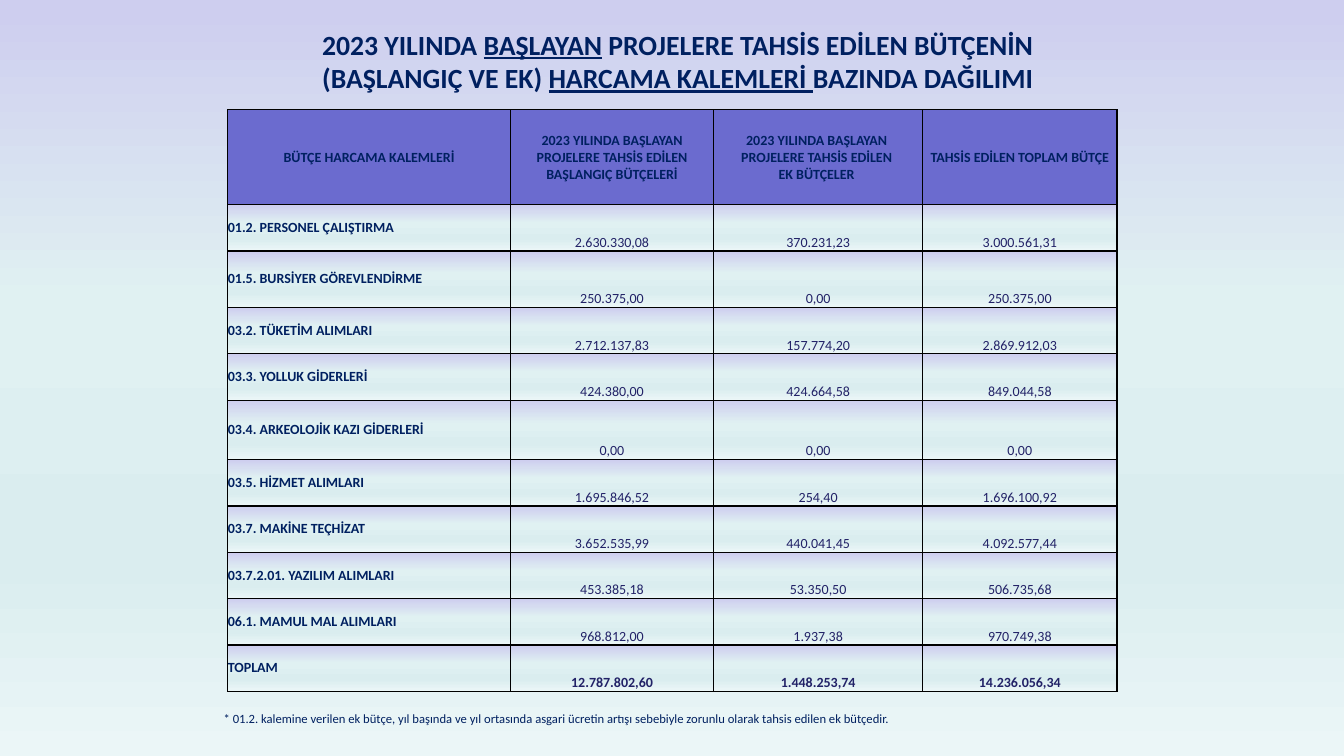
from copy import deepcopy

from lxml import etree
from pptx import Presentation
from pptx.dml.color import RGBColor
from pptx.enum.text import MSO_ANCHOR, MSO_AUTO_SIZE, PP_ALIGN
from pptx.oxml.ns import qn
from pptx.util import Emu, Pt

PX = 9144
FONT = "Calibri"
CENTER, LEFT = PP_ALIGN.CENTER, PP_ALIGN.LEFT
MIDDLE, BOTTOM = MSO_ANCHOR.MIDDLE, MSO_ANCHOR.BOTTOM
NO_AUTOFIT = MSO_AUTO_SIZE.NONE

COLORS = {
    "navy": "002060",
    "figure": "222267",
    "header": "6B6BCF",
    "border": "000000",
    "lavender": "CECEEF",
    "mint": "E0F1F2",
    "aqua": "DAEDEF",
    "ice": "EBF6F7",
}
GRADIENT = [(0.01, "lavender"), (0.4, "mint"), (0.74, "aqua"), (1, "ice")]

TITLE_RUNS = [
    ("2023 YILINDA ", False),
    ("BAŞLAYAN", True),
    (" PROJELERE TAHSİS EDİLEN BÜTÇENİN (BAŞLANGIÇ VE EK) ", False),
    ("HARCAMA KALEMLERİ ", True),
    ("BAZINDA DAĞILIMI", False),
]
COLUMN_WIDTHS = [280, 202, 207, 193]
ROW_HEIGHTS = [94, 46, 56, 46, 46, 59] + [46] * 5
BUDGET_ROWS = [
    ["BÜTÇE HARCAMA KALEMLERİ",
     "2023 YILINDA BAŞLAYAN PROJELERE TAHSİS EDİLEN BAŞLANGIÇ BÜTÇELERİ",
     "2023 YILINDA BAŞLAYAN \nPROJELERE TAHSİS EDİLEN \nEK BÜTÇELER ",
     "TAHSİS EDİLEN TOPLAM BÜTÇE"],
    ["01.2. PERSONEL ÇALIŞTIRMA", "2.630.330,08", "370.231,23", "3.000.561,31"],
    ["01.5. BURSİYER GÖREVLENDİRME", "250.375,00", "0,00", "250.375,00"],
    ["03.2. TÜKETİM ALIMLARI", "2.712.137,83", "157.774,20", "2.869.912,03"],
    ["03.3. YOLLUK GİDERLERİ", "424.380,00", "424.664,58", "849.044,58"],
    ["03.4. ARKEOLOJİK KAZI GİDERLERİ", "0,00", "0,00", "0,00"],
    ["03.5. HİZMET ALIMLARI", "1.695.846,52", "254,40", "1.696.100,92"],
    ["03.7. MAKİNE TEÇHİZAT", "3.652.535,99", "440.041,45", "4.092.577,44"],
    ["03.7.2.01. YAZILIM ALIMLARI", "453.385,18", "53.350,50", "506.735,68"],
    ["06.1. MAMUL MAL ALIMLARI", "968.812,00", "1.937,38", "970.749,38"],
    ["TOPLAM", "12.787.802,60", "1.448.253,74", "14.236.056,34"],
]
FOOTNOTE = ("* 01.2. kalemine verilen ek bütçe, yıl başında ve yıl ortasında asgari "
            "ücretin artışı sebebiyle zorunlu olarak tahsis edilen ek bütçedir.")


def scaled(*lengths):
    """Turn px lengths into EMU."""
    return [Emu(length * PX) for length in lengths]


def add_text(paragraph, text, size=10, color="navy", bold=False, underline=False, align=LEFT):
    """Add one formatted run to a paragraph."""
    paragraph.alignment = align
    run = paragraph.add_run()
    run.text = text
    run.font.name = FONT
    run.font.size = Pt(size)
    run.font.bold = bold
    run.font.underline = underline
    run.font.color.rgb = RGBColor.from_string(COLORS[color])


def fill_gradient(fill, properties):
    """Apply the vertical pastel gradient to a fill held by the given properties."""
    fill.gradient()
    fill.gradient_angle = 270
    stop_list = properties.find(".//" + qn("a:gsLst"))
    while len(stop_list) < len(GRADIENT):
        stop_list.append(deepcopy(stop_list[0]))
    for stop, (position, color) in zip(fill.gradient_stops, GRADIENT):
        stop.position = position
        stop.color.rgb = RGBColor.from_string(COLORS[color])


def add_borders(properties):
    """Draw a one-point line on each side of a table cell."""
    for side in ("a:lnL", "a:lnR", "a:lnT", "a:lnB"):
        line = etree.SubElement(properties, qn(side), w=str(Pt(1)))
        solid = etree.SubElement(line, qn("a:solidFill"))
        etree.SubElement(solid, qn("a:srgbClr"), val=COLORS["border"])


def format_cell(cell, text, is_header, is_label, is_total):
    """Write and format one budget cell by its role."""
    cell.margin_left = cell.margin_right = cell.margin_top = cell.margin_bottom = 0
    is_figure = not (is_header or is_label)
    cell.vertical_anchor = BOTTOM if is_figure else MIDDLE
    properties = cell._tc.get_or_add_tcPr()
    add_borders(properties)
    if is_header:
        cell.fill.solid()
        cell.fill.fore_color.rgb = RGBColor.from_string(COLORS["header"])
    else:
        fill_gradient(cell.fill, properties)
    frame = cell.text_frame
    for index, line in enumerate(text.split("\n")):
        paragraph = frame.add_paragraph() if index else frame.paragraphs[0]
        add_text(paragraph, line, color="figure" if is_figure else "navy",
                 bold=not is_figure or is_total,
                 align=CENTER if is_header or is_figure else LEFT)


def place_title(slide, left, top, width, height):
    """Place the two-line title, filled with the slide background, in its placeholder."""
    title = slide.shapes.title
    title._element.set("useBgFill", "1")
    title.left, title.top, title.width, title.height = scaled(left, top, width, height)
    frame = title.text_frame
    frame.word_wrap = True
    frame.auto_size = NO_AUTOFIT
    frame.vertical_anchor = MIDDLE
    for text, underline in TITLE_RUNS:
        add_text(frame.paragraphs[0], text, size=19.8, bold=True,
                 underline=underline, align=CENTER)


def add_budget_table(slide, left, top):
    """Add the budget table with its corner at the given point."""
    box = scaled(left, top, sum(COLUMN_WIDTHS), sum(ROW_HEIGHTS))
    table = slide.shapes.add_table(len(ROW_HEIGHTS), len(COLUMN_WIDTHS), *box).table
    table.horz_banding = False
    for column, width in zip(table.columns, scaled(*COLUMN_WIDTHS)):
        column.width = width
    for row, height in zip(table.rows, scaled(*ROW_HEIGHTS)):
        row.height = height
    last_row = len(BUDGET_ROWS) - 1
    for row_index, texts in enumerate(BUDGET_ROWS):
        for column_index, text in enumerate(texts):
            format_cell(table.cell(row_index, column_index), text,
                        row_index == 0, column_index == 0, row_index == last_row)


def add_footnote(slide, left, top, width, height):
    """Add the note below the table."""
    frame = slide.shapes.add_textbox(*scaled(left, top, width, height)).text_frame
    frame.word_wrap = True
    add_text(frame.paragraphs[0], FOOTNOTE, size=9)


def main():
    """Build and save the budget slide."""
    presentation = Presentation()
    presentation.slide_width, presentation.slide_height = scaled(1333, 750)
    slide = presentation.slides.add_slide(presentation.slide_layouts[5])
    fill_gradient(slide.background.fill, slide._element)
    place_title(slide, 251, 18, 842, 85)
    add_budget_table(slide, 226, 109)
    add_footnote(slide, 212, 700, 740, 25)
    presentation.save("out.pptx")


if __name__ == "__main__":
    main()
